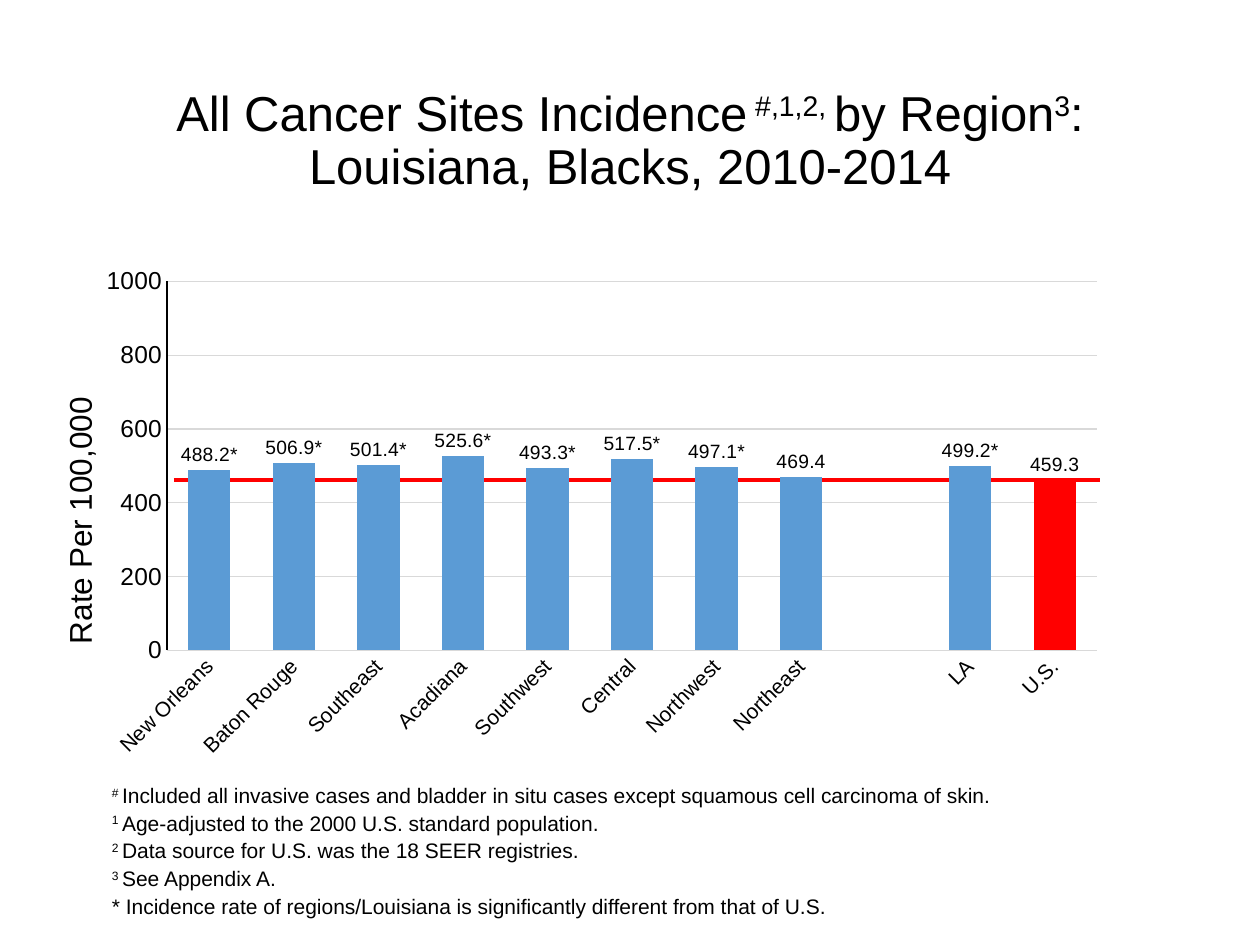
from lxml import etree
from pptx import Presentation
from pptx.chart.data import CategoryChartData
from pptx.dml.color import RGBColor
from pptx.enum.chart import XL_CHART_TYPE, XL_LABEL_POSITION, XL_TICK_MARK
from pptx.enum.shapes import MSO_CONNECTOR
from pptx.enum.text import MSO_ANCHOR, MSO_AUTO_SIZE, PP_ALIGN
from pptx.oxml.ns import qn
from pptx.util import Inches, Pt

COLUMNS = XL_CHART_TYPE.COLUMN_CLUSTERED
STRAIGHT = MSO_CONNECTOR.STRAIGHT
OUTSIDE_END = XL_LABEL_POSITION.OUTSIDE_END
NO_TICK = XL_TICK_MARK.NONE
MIDDLE, TOP = MSO_ANCHOR.MIDDLE, MSO_ANCHOR.TOP
CENTER, LEFT = PP_ALIGN.CENTER, PP_ALIGN.LEFT
GROW, FIXED = MSO_AUTO_SIZE.SHAPE_TO_FIT_TEXT, MSO_AUTO_SIZE.NONE

COLORS = {"text": "000000", "bar": "5B9BD5", "national": "FF0000", "grid": "D9D9D9"}
RATES = [
    ("New Orleans", 488.2), ("Baton Rouge", 506.9), ("Southeast", 501.4),
    ("Acadiana", 525.6), ("Southwest", 493.3), ("Central", 517.5),
    ("Northwest", 497.1), ("Northeast", 469.4), ("", None),
    ("LA", 499.2), ("U.S.", 459.3),
]
NOT_SIGNIFICANT = ("", "Northeast", "U.S.")
PLOT = {"x": 0.066, "y": 0.04, "w": 0.909, "h": 0.714}
TITLE = [[("All Cancer Sites Incidence", False), (" #,1,2, ", True), ("by Region", False),
          ("3", True), (": Louisiana, Blacks, 2010-2014", False)]]
NOTES = [
    [("# ", True), ("Included all invasive cases and bladder in situ cases "
                    "except squamous cell carcinoma of skin.", False)],
    [("1 ", True), ("Age-adjusted to the 2000 U.S. standard population.", False)],
    [("2 ", True), ("Data source for U.S. was the 18 SEER registries.", False)],
    [("3 ", True), ("See Appendix A.", False)],
    [("* Incidence rate of regions/Louisiana is significantly different "
      "from that of U.S.", False)],
]


def color(name):
    """Return the named colour."""
    return RGBColor.from_string(COLORS[name])


def apply(target, values):
    """Set each attribute of target from a dict."""
    for name, value in values.items():
        setattr(target, name, value)


def style_font(font, size, face="Arial"):
    """Give a font its face, size and black colour."""
    apply(font, {"name": face, "size": Pt(size), "bold": False})
    font.color.rgb = color("text")


def style_line(line, name, width):
    """Give a line its colour and width."""
    line.color.rgb = color(name)
    line.width = Pt(width)


def add_text(page, place, paragraphs, size, frame, spacings, align=LEFT):
    """Add a text box of paragraphs made of (text, superscript) spans."""
    box = page.shapes.add_textbox(*map(Inches, place))
    apply(box.text_frame, frame)
    for index, (spans, spacing) in enumerate(zip(paragraphs, spacings)):
        para = box.text_frame.paragraphs[0] if index == 0 else box.text_frame.add_paragraph()
        apply(para, {"alignment": align, "line_spacing": spacing})
        for text, raised in spans:
            span = para.add_run()
            span.text = text
            style_font(span.font, size)
            if raised:
                span.font._element.set("baseline", "30000")
    return box


def add_reference_line(page, left, right, top):
    """Add the red line at the national rate."""
    line = page.shapes.add_connector(STRAIGHT, *map(Inches, (left, top, right, top)))
    style_line(line.line, "national", 2)
    etree.SubElement(line._element.spPr, qn("a:effectLst"))


def clear_background(chart):
    """Make the chart and plot areas transparent."""
    body = chart._chartSpace.find(qn("c:chart"))
    outer = etree.Element(qn("c:spPr"))
    body.addnext(outer)
    inner = etree.SubElement(body.find(qn("c:plotArea")), qn("c:spPr"))
    for properties in (outer, inner):
        etree.SubElement(properties, qn("a:noFill"))
        etree.SubElement(etree.SubElement(properties, qn("a:ln")), qn("a:noFill"))


def place_plot(chart):
    """Fix the inner plot area by fractions of the chart."""
    area = chart._chartSpace.find(qn("c:chart")).find(qn("c:plotArea"))
    layout = area.find(qn("c:layout"))
    if layout is None:
        layout = etree.Element(qn("c:layout"))
        area.insert(0, layout)
    manual = etree.SubElement(layout, qn("c:manualLayout"))
    settings = {"layoutTarget": "inner", "xMode": "edge", "yMode": "edge", **PLOT}
    for name, value in settings.items():
        etree.SubElement(manual, qn(f"c:{name}")).set("val", str(value))


def style_axes(chart):
    """Style both axes and slant the region names."""
    regions, rates = chart.category_axis, chart.value_axis
    for axis, size, line in ((regions, 12, "grid"), (rates, 14, "text")):
        apply(axis, {"major_tick_mark": NO_TICK, "minor_tick_mark": NO_TICK})
        style_font(axis.tick_labels.font, size)
        style_line(axis.format.line, line, 0.75)
    apply(rates, {"minimum_scale": 0, "maximum_scale": 1000, "major_unit": 200})
    style_line(rates.major_gridlines.format.line, "grid", 0.75)
    slant = regions._element.find(qn("c:txPr")).find(qn("a:bodyPr"))
    slant.set("rot", "-2700000")
    slant.set("vert", "horz")


def label_bars(series):
    """Show the rates, with a star on each significant difference."""
    labels = series.data_labels
    apply(labels, {"show_value": True, "position": OUTSIDE_END})
    style_font(labels.font, 11)
    for index, (region, rate) in enumerate(RATES):
        if region not in NOT_SIGNIFICANT:
            label = series.points[index].data_label
            span = label.text_frame.paragraphs[0].add_run()
            span.text = f"{rate}*"
            style_font(span.font, 11)
            label.position = OUTSIDE_END


def add_rate_chart(page, place):
    """Add the column chart of rates by region."""
    regions, rates = zip(*RATES)
    data = CategoryChartData()
    data.categories = regions
    data.add_series("Series 1", rates)
    chart = page.shapes.add_chart(COLUMNS, *map(Inches, place), data).chart
    apply(chart, {"has_legend": False, "has_title": False})
    style_font(chart.font, 10, "Calibri")
    plot = chart.plots[0]
    apply(plot, {"gap_width": 100, "overlap": -27, "vary_by_categories": False})
    series = plot.series[0]
    national = series.points[len(RATES) - 1]
    for item, name in ((series, "bar"), (national, "national")):
        item.format.fill.solid()
        item.format.fill.fore_color.rgb = color(name)
    label_bars(series)
    style_axes(chart)
    place_plot(chart)
    clear_background(chart)


def main():
    """Build and save the slide."""
    deck = Presentation()
    apply(deck, {"slide_width": Inches(10), "slide_height": Inches(7.5)})
    page = deck.slides.add_slide(deck.slide_layouts[6])
    title_frame = {"word_wrap": True, "auto_size": FIXED, "vertical_anchor": MIDDLE}
    label_frame = {"word_wrap": False, "auto_size": GROW, "vertical_anchor": TOP}
    add_reference_line(page, 1.38, 8.73, 3.81)
    add_text(page, (0.69, 0.4, 8.62, 1.45), TITLE, 28, title_frame, [0.9], CENTER)
    add_rate_chart(page, (0.79, 2.07, 8.12, 4.1))
    add_text(page, (0.79, 6.16, 7.24, 1.19), NOTES, 12, label_frame, [1.0] + [1.1] * 4)
    axis_title = add_text(page, (-0.46, 3.92, 2.18, 0.4), [[("Rate Per 100,000", False)]],
                          18, label_frame, [1.0])
    axis_title.rotation = 270
    deck.save("out.pptx")


if __name__ == "__main__":
    main()
